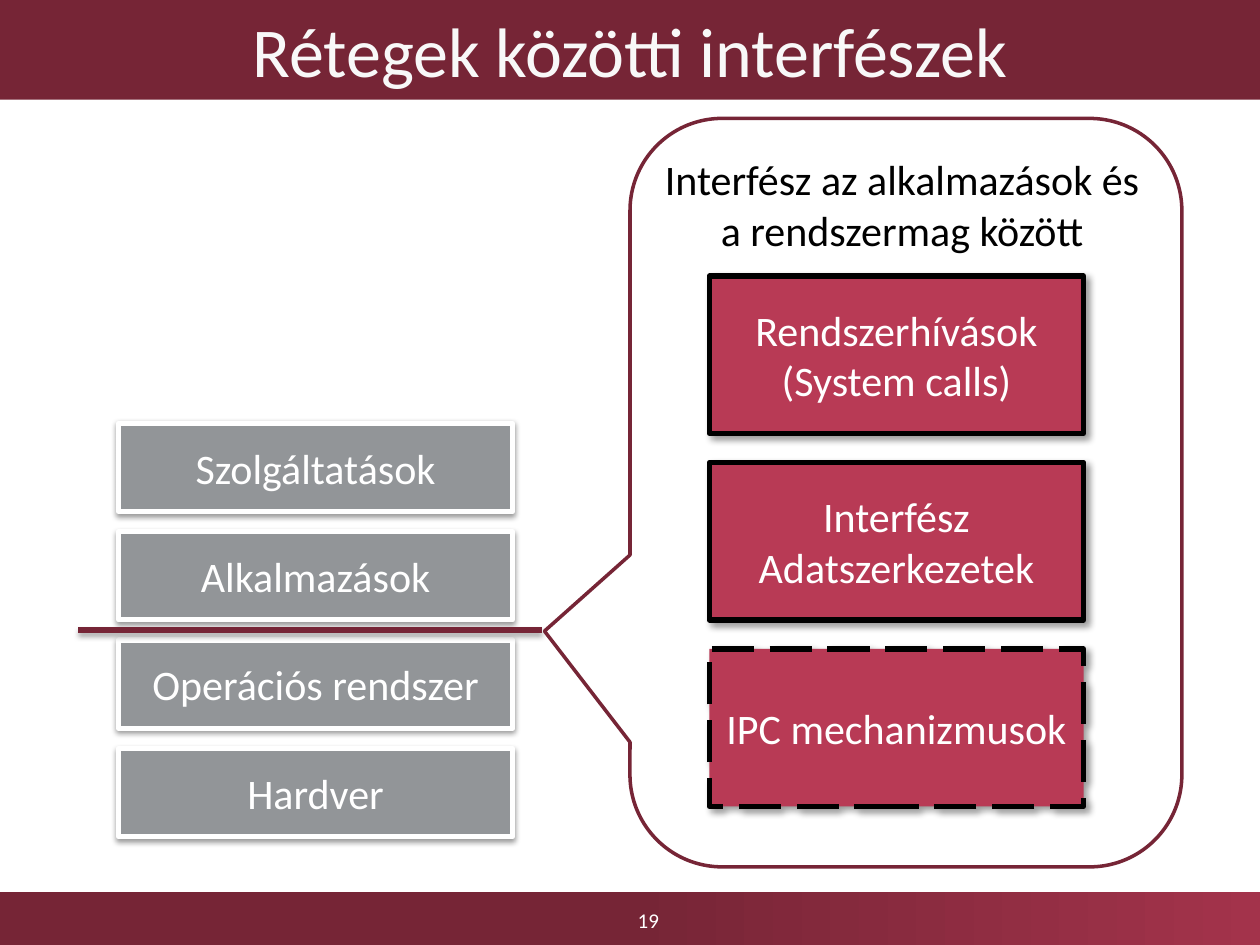
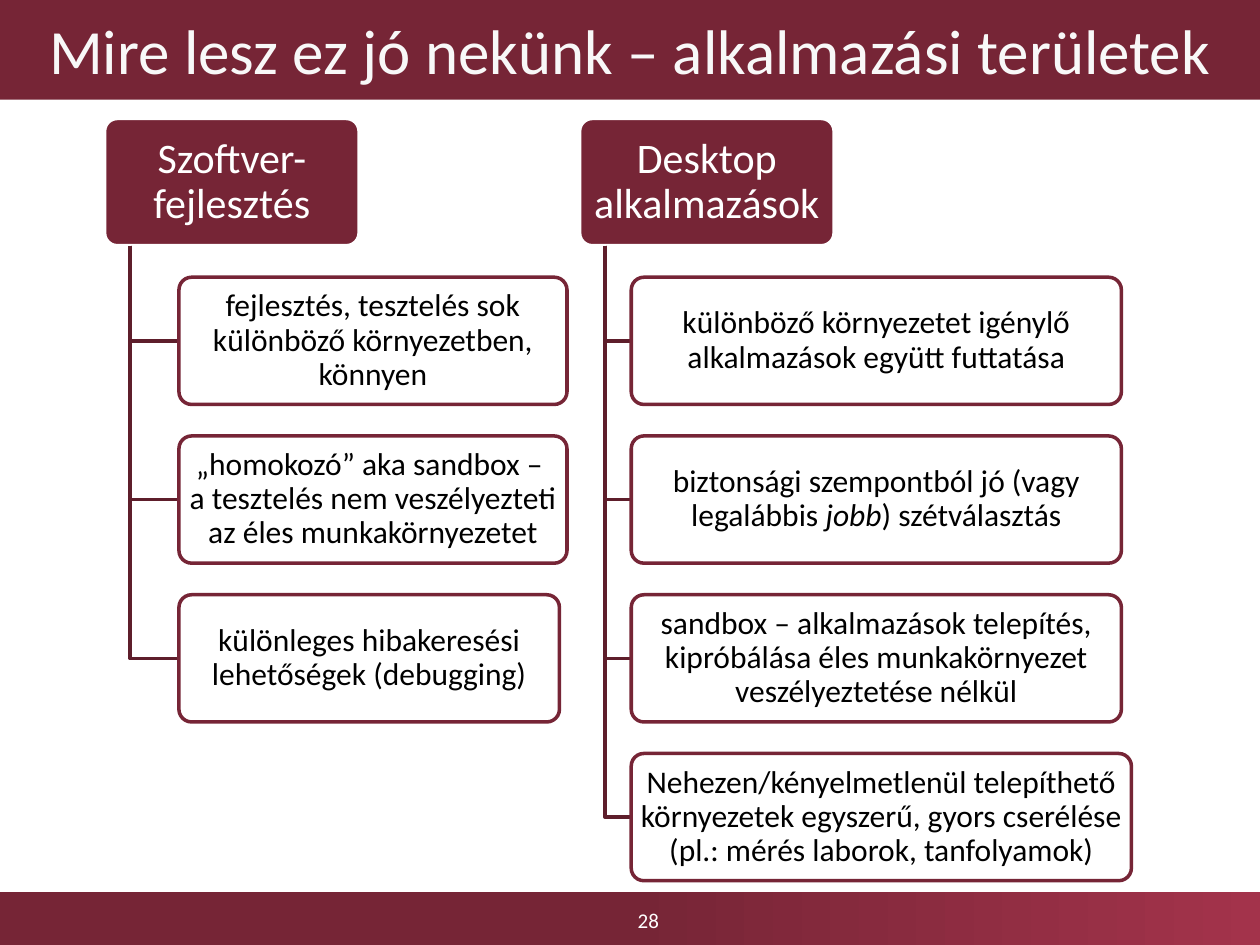
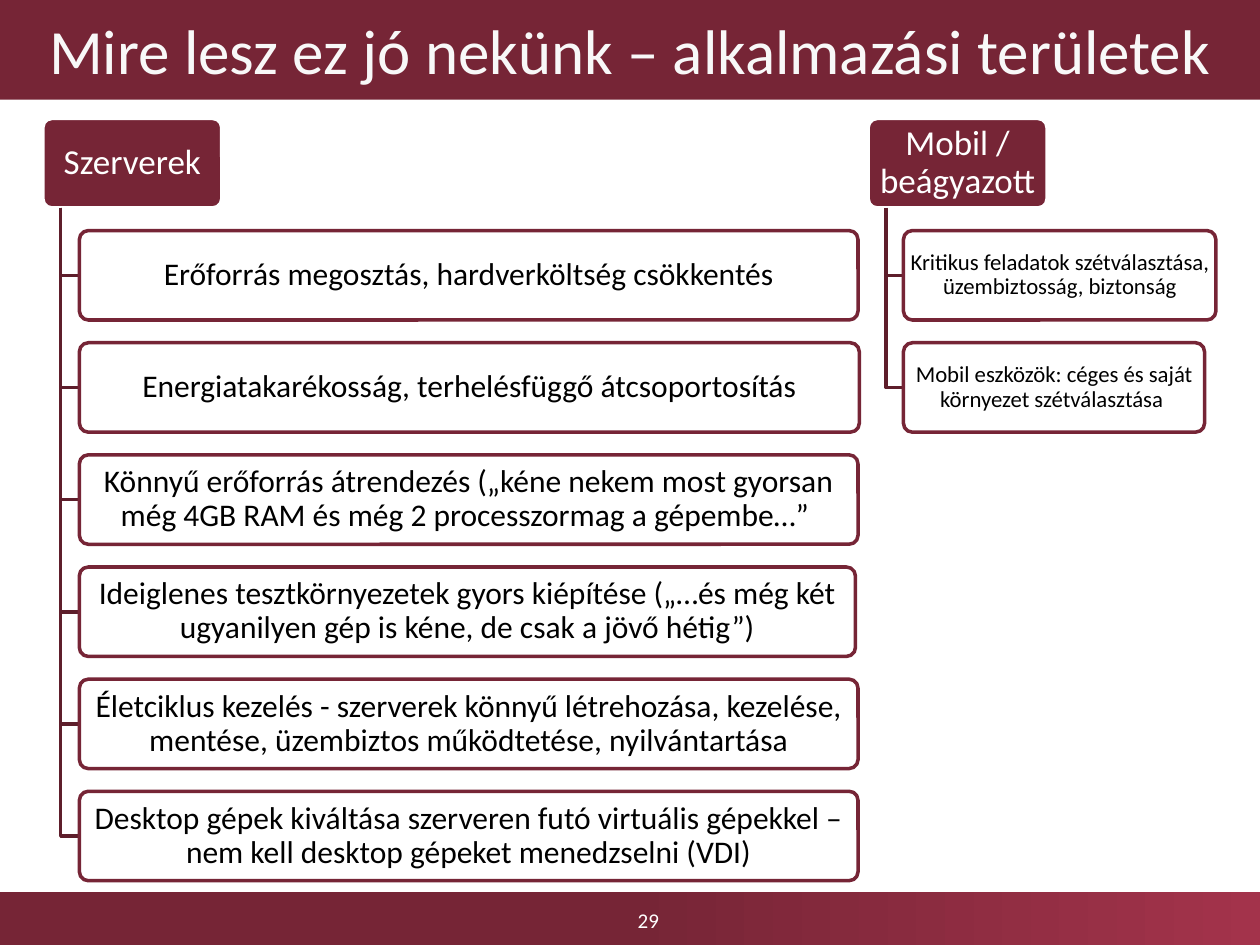
from lxml import etree
from pptx import Presentation
from pptx.dml.color import RGBColor
from pptx.enum.dml import MSO_LINE
from pptx.enum.shapes import MSO_CONNECTOR, MSO_SHAPE
from pptx.enum.text import MSO_ANCHOR, MSO_AUTO_SIZE, PP_ALIGN
from pptx.oxml.ns import qn
from pptx.util import Inches, Pt

RECT = MSO_SHAPE.RECTANGLE
ROUND = MSO_SHAPE.ROUNDED_RECTANGLE
CALLOUT = MSO_SHAPE.ROUNDED_RECTANGULAR_CALLOUT
STRAIGHT = MSO_CONNECTOR.STRAIGHT
DASH = MSO_LINE.LONG_DASH
CENTER = PP_ALIGN.CENTER
MIDDLE, TOP = MSO_ANCHOR.MIDDLE, MSO_ANCHOR.TOP
NO_FIT, GROW = MSO_AUTO_SIZE.NONE, MSO_AUTO_SIZE.SHAPE_TO_FIT_TEXT

WINE = RGBColor(0x76, 0x25, 0x36)
DARK_WINE = RGBColor(0x5E, 0x1E, 0x2B)
BAND_END = RGBColor(0xA3, 0x33, 0x4B)
ROSE = RGBColor(0xB8, 0x3A, 0x55)
GRAY = RGBColor(0x92, 0x95, 0x98)
OFF_WHITE = RGBColor(0xF8, 0xF8, 0xF8)
WHITE = RGBColor(0xFF, 0xFF, 0xFF)
BLACK = RGBColor(0, 0, 0)

FONT = "Calibri"
TITLE_ONLY = 5
LAYER_SHADOW = (38, 3.1, 1.6, 90)
LINE_SHADOW = (35, 3.1, 1.8, 90)
BOX_SHADOW = (40, 4, 3, 45)


def write(tf, text, size=24, color=BLACK, anchor=MIDDLE, spacing=None,
          inset=None, wrap=True, fit=NO_FIT):
    tf.word_wrap = wrap
    tf.auto_size = fit
    tf.vertical_anchor = anchor
    if inset is not None:
        tf.margin_left = tf.margin_right = Inches(inset)
        tf.margin_top = tf.margin_bottom = Inches(inset)
    for n, line in enumerate(text.split("\n")):
        p = tf.add_paragraph() if n else tf.paragraphs[0]
        p.alignment = CENTER
        if spacing:
            p.line_spacing = spacing
        for k, row in enumerate(line.split("\v")):
            if k:
                p.add_line_break()
            for i, part in enumerate(row.split("*")):
                r = p.add_run()
                r.text = part
                r.font.name = FONT
                r.font.size = Pt(size)
                r.font.color.rgb = color
                if i % 2:
                    r.font.italic = True


def add_shadow(spPr, alpha, blur, dist, angle):
    effects = spPr.find(qn("a:effectLst"))
    outer = etree.SubElement(effects, qn("a:outerShdw"), blurRad=str(Pt(blur)),
                             dist=str(Pt(dist)), dir=str(angle * 60000), rotWithShape="0")
    clr = etree.SubElement(outer, qn("a:srgbClr"), val=str(BLACK))
    etree.SubElement(clr, qn("a:alpha"), val=str(alpha * 1000))


class Deck:
    def __init__(self):
        self.prs = Presentation()
        self.prs.slide_width, self.prs.slide_height = Inches(10), Inches(7.5)
        self.s = None

    def slide(self, title, number, size):
        self.s = self.prs.slides.add_slide(self.prs.slide_layouts[TITLE_ONLY])
        sp = self.s.shapes.title
        sp.left, sp.top, sp.width, sp.height = Inches(0), Inches(0), Inches(10), Inches(0.79)
        sp.fill.solid()
        sp.fill.fore_color.rgb = WINE
        write(sp.text_frame, title, size=size, color=OFF_WHITE)
        band = self.box(0, 7.08, 10, 0.42, fill=WINE)
        band.fill.gradient()
        band.fill.gradient_angle = 0
        start, end = band.fill.gradient_stops
        start.position, end.position = 0.5, 1
        start.color.rgb, end.color.rgb = WINE, BAND_END
        self.text(3.52, 7.11, 3.25, 0.39, str(number), size=12, color=WHITE)

    def box(self, x, y, w, h, text=None, kind=RECT, fill=WHITE, line=None, width=2,
            dash=None, adjust=(), alpha=None, shadow=None, **style):
        sp = self.s.shapes.add_shape(kind, Inches(x), Inches(y), Inches(w), Inches(h))
        for i, value in enumerate(adjust):
            sp.adjustments[i] = value
        sp.fill.solid()
        sp.fill.fore_color.rgb = fill
        if alpha:
            clr = sp._element.spPr.find(qn("a:solidFill"))[0]
            etree.SubElement(clr, qn("a:alpha"), val=str(alpha * 1000))
        if line is None:
            sp.line.fill.background()
        else:
            sp.line.color.rgb = line
            sp.line.width = Pt(width)
        if dash:
            sp.line.dash_style = dash
        sp.shadow.inherit = False
        if shadow:
            add_shadow(sp._element.spPr, *shadow)
        if text:
            write(sp.text_frame, text, **style)
        return sp

    def text(self, x, y, w, h, text, **style):
        sp = self.s.shapes.add_textbox(Inches(x), Inches(y), Inches(w), Inches(h))
        write(sp.text_frame, text, **style)

    def line(self, x1, y1, x2, y2, color, width, shadow):
        c = self.s.shapes.add_connector(STRAIGHT, Inches(x1), Inches(y1), Inches(x2), Inches(y2))
        c.line.color.rgb = color
        c.line.width = Pt(width)
        spPr = c._element.spPr
        etree.SubElement(spPr, qn("a:effectLst"))
        add_shadow(spPr, *shadow)

    def elbow(self, x1, y1, x2, y2):
        fb = self.s.shapes.build_freeform(Inches(x1), Inches(y1))
        fb.add_line_segments([(Inches(x1), Inches(y2)), (Inches(x2), Inches(y2))], close=False)
        sp = fb.convert_to_shape()
        sp.fill.background()
        sp.line.color.rgb = DARK_WINE
        sp.line.width = Pt(2)
        sp.shadow.inherit = False

    def branch(self, x, child_x, h, pitch, head, head_size, size, children):
        top, head_w = 0.94, 2 * h
        style = dict(kind=ROUND, adjust=[0.1], spacing=0.9, inset=0.02)
        self.box(x, top, head_w, h, head, fill=WINE, line=WHITE, size=head_size,
                 color=WHITE, **style)
        for i, (w, text) in enumerate(children, 1):
            y = top + pitch * i
            self.elbow(x + 0.1 * head_w, top + h, child_x, y + h / 2)
            self.box(child_x, y, w, h, text, line=WINE, alpha=90, size=size, **style)


def layers_slide(deck):
    deck.slide("Rétegek közötti interfészek", 19, size=40)
    layers = ["Szolgáltatások", "Alkalmazások", "Operációs rendszer", "Hardver"]
    for i, name in enumerate(layers):
        deck.box(0.94, 3.36 + 0.86 * i, 3.13, 0.7, name, fill=GRAY, line=WHITE, width=3,
                 shadow=LAYER_SHADOW, color=WHITE)
    deck.line(0.62, 5, 4.3, 5, WINE, 3, LINE_SHADOW)
    deck.box(5, 0.94, 4.38, 5.94, kind=CALLOUT, line=WINE, adjust=[-0.655, 0.185, 0.167])
    deck.text(5.16, 1.17, 4, 0.91, "Interfész az alkalmazások és\na rendszermag között",
              anchor=TOP, wrap=False, fit=GROW)
    interfaces = [("Rendszerhívások\n(System calls)", None),
                  ("Interfész Adatszerkezetek", None),
                  ("IPC mechanizmusok", DASH)]
    for i, (name, dash) in enumerate(interfaces):
        deck.box(5.63, 2.19 + 1.48 * i, 2.97, 1.25, name, fill=ROSE, line=BLACK, width=3,
                 dash=dash, shadow=BOX_SHADOW, color=WHITE)


def desktop_slide(deck, title):
    deck.slide(title, 28, size=36)
    deck.branch(0.83, 1.42, 1.01, 1.26, "Szoftver-fejlesztés", 24, 18, [
        (3.08, "fejlesztés, tesztelés sok különböző környezetben, könnyen"),
        (3.08, "„homokozó” aka sandbox – \va tesztelés nem veszélyezteti az éles munkakörnyezetet"),
        (3.02, "különleges hibakeresési lehetőségek (debugging)"),
    ])
    deck.branch(4.6, 5.01, 1.01, 1.26, "Desktop alkalmazások", 24, 18, [
        (3.89, "különböző környezetet igénylő alkalmazások együtt futtatása"),
        (3.89, "biztonsági szempontból jó (vagy legalábbis *jobb*) szétválasztás"),
        (3.89, "sandbox – alkalmazások telepítés, kipróbálása éles munkakörnyezet "
               "veszélyeztetése nélkül"),
        (3.97, "Nehezen/kényelmetlenül telepíthető környezetek egyszerű, gyors cserélése "
               "(pl.: mérés laborok, tanfolyamok)"),
    ])


def server_slide(deck, title):
    deck.slide(title, 29, size=36)
    deck.branch(0.34, 0.63, 0.71, 0.89, "Szerverek", 20, 18, [
        (6.18, "Erőforrás megosztás, hardverköltség csökkentés"),
        (6.19, "Energiatakarékosság, terhelésfüggő átcsoportosítás"),
        (6.18, "Könnyű erőforrás átrendezés („kéne nekem most gyorsan "
               "még 4GB RAM és még 2 processzormag a gépembe…” "),
        (6.16, "Ideiglenes tesztkörnyezetek gyors kiépítése („…és még két "
               "ugyanilyen gép is kéne, de csak a jövő hétig”)"),
        (6.18, "Életciklus kezelés - szerverek könnyű létrehozása, kezelése, "
               "mentése, üzembiztos működtetése, nyilvántartása"),
        (6.18, "Desktop gépek kiváltása szerveren futó virtuális gépekkel – "
               "nem kell desktop gépeket menedzselni (VDI)"),
    ])
    deck.branch(6.89, 7.17, 0.71, 0.89, "Mobil / beágyazott", 20, 13, [
        (2.48, "Kritikus feladatok szétválasztása, üzembiztosság, biztonság"),
        (2.39, "Mobil eszközök: céges és saját környezet szétválasztása "),
    ])


def main():
    deck = Deck()
    areas = "Mire lesz ez jó nekünk – alkalmazási területek"
    layers_slide(deck)
    desktop_slide(deck, areas)
    server_slide(deck, areas)
    deck.prs.save("out.pptx")


if __name__ == "__main__":
    main()
